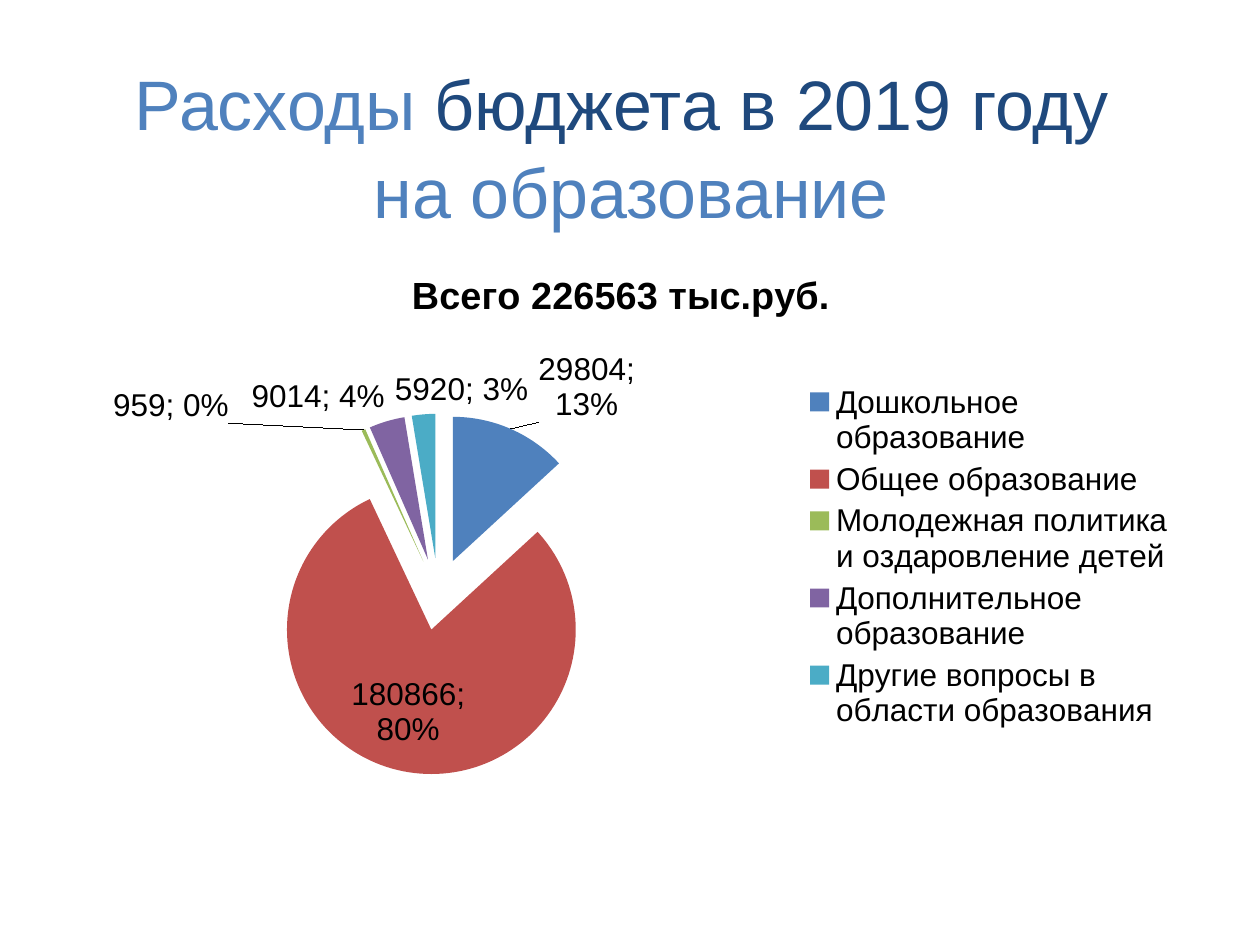
import pptx
import pptx.chart.data
import pptx.dml.color
import pptx.enum.chart
import pptx.enum.text
import pptx.oxml
import pptx.util
from pptx.util import Inches

THEME = {
    "font": "Arial",
    "blue": "4F81BD",
    "navy": "1F497D",
    "black": "000000",
    "slices": ["4F81BD", "C0504D", "9BBB59", "8064A2", "4BACC6"],
    "heading": 40,
    "chart_title": 21.6,
    "chart_text": 18,
}


def style(font, size, color, bold=False):
    font.name = THEME["font"]
    font.size = pptx.util.Pt(size)
    font.bold = bold
    font.color.rgb = pptx.dml.color.RGBColor.from_string(color)


deck = pptx.Presentation()
deck.slide_width, deck.slide_height = Inches(10), Inches(7.5)
page = deck.slides.add_slide(deck.slide_layouts[6])

# Heading
box = page.shapes.add_textbox(Inches(0.51), Inches(0.52), Inches(9), Inches(1.25))
box.text_frame.word_wrap = True
box.text_frame.vertical_anchor = pptx.enum.text.MSO_ANCHOR.MIDDLE
para = box.text_frame.paragraphs[0]
para.alignment = pptx.enum.text.PP_ALIGN.CENTER
para.line_spacing = 1.05
for text, color in [("Расходы", "blue"), (" бюджета в 2019 году ", "navy"),
                    (None, None), ("на образование", "blue")]:
    if text is None:
        para.add_line_break()
        continue
    span = para.add_run()
    span.text = text
    style(span.font, THEME["heading"], THEME[color])

# Education spending by category
spending = {
    "Дошкольное образование": 29804,
    "Общее образование": 180866,
    "Молодежная политика и оздаровление детей": 959,
    "Дополнительное образование": 9014,
    "Другие вопросы в области образования": 5920,
}
data = pptx.chart.data.CategoryChartData(number_format="General")
data.categories = list(spending)
data.add_series("Series 1", list(spending.values()))
chart = page.shapes.add_chart(
    pptx.enum.chart.XL_CHART_TYPE.PIE,
    Inches(0.43), Inches(1.94), Inches(9), Inches(4.95), data).chart
style(chart.font, THEME["chart_text"], THEME["black"])

# Chart title and legend
chart.has_title = True
chart.chart_title.include_in_layout = False
para = chart.chart_title.text_frame.paragraphs[0]
span = para.add_run()
span.text = "Всего 226563 тыс.руб."
style(span.font, THEME["chart_title"], THEME["black"], bold=True)
chart.has_legend = True
chart.legend.position = pptx.enum.chart.XL_LEGEND_POSITION.RIGHT
chart.legend.include_in_layout = False
style(chart.legend.font, THEME["chart_text"], THEME["black"])

# Slices, pulled apart
plot = chart.plots[0]
plot.vary_by_categories = True
series = plot.series[0]
for index, color in enumerate(THEME["slices"]):
    fill = series.points[index].format.fill
    fill.solid()
    fill.fore_color.rgb = pptx.dml.color.RGBColor.from_string(color)
explosion = pptx.oxml.parse_xml(
    '<c:explosion xmlns:c="http://schemas.openxmlformats.org/drawingml/2006/chart" val="25"/>')
series._element.find(pptx.oxml.ns.qn("c:dPt")).addprevious(explosion)

# Value and share labels
labels = series.data_labels
labels.show_value = True
labels.show_percentage = True
labels.show_legend_key = False
labels.position = pptx.enum.chart.XL_LABEL_POSITION.BEST_FIT
style(labels.font, THEME["chart_text"], THEME["black"])
leader = labels._element.find(pptx.oxml.ns.qn("c:showLeaderLines"))
if leader is not None:
    leader.set("val", "1")

deck.save("out.pptx")
